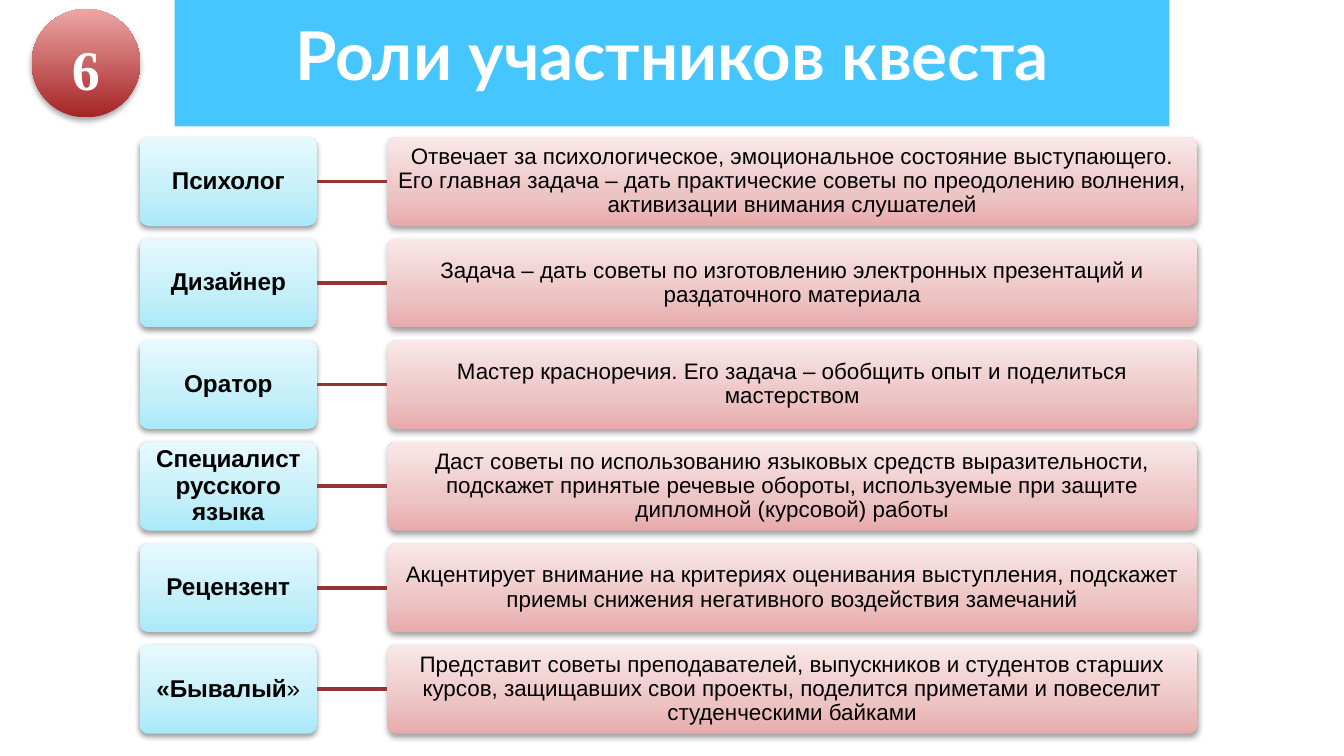
from dataclasses import dataclass

from lxml import etree
from pptx import Presentation
from pptx.dml.color import RGBColor
from pptx.enum.shapes import MSO_CONNECTOR, MSO_SHAPE
from pptx.enum.text import MSO_ANCHOR, PP_ALIGN
from pptx.oxml import parse_xml
from pptx.oxml.ns import qn
from pptx.util import Cm, Pt

RECTANGLE, ROUNDED, OVAL = MSO_SHAPE.RECTANGLE, MSO_SHAPE.ROUNDED_RECTANGLE, MSO_SHAPE.OVAL
STRAIGHT = MSO_CONNECTOR.STRAIGHT
CENTER, TOP, MIDDLE = PP_ALIGN.CENTER, MSO_ANCHOR.TOP, MSO_ANCHOR.MIDDLE
LEFT_SIDE, RIGHT_SIDE = 1, 3
DRAWING_NS = "http://schemas.openxmlformats.org/drawingml/2006/main"


@dataclass(frozen=True)
class Theme:
    banner: str = "00B2FF"
    banner_opacity: int = 73
    light: str = "FFFFFF"
    dark: str = "000000"
    link: str = "963334"
    role_stops: tuple = ((0, "A9E9F9"), (35, "C3EFF9"), (100, "E7F9FE"))
    task_stops: tuple = ((0, "E8AAAA"), (35, "EDC4C4"), (100, "F9E8E8"))
    badge_stops: tuple = ((0, "A52425"), (100, "EDA5A5"))
    title_font: str = "Lato"
    body_font: str = "Arial"
    badge_font: str = "Times New Roman"
    title_size: int = 36
    badge_size: int = 30
    role_size: int = 13
    task_size: int = 12


THEME = Theme()

ROLES = [
    ("Психолог", "Отвечает за психологическое, эмоциональное состояние выступающего. "
     "Его главная задача – дать практические советы по преодолению волнения, "
     "активизации внимания слушателей"),
    ("Дизайнер", "Задача – дать советы по изготовлению электронных презентаций и "
     "раздаточного материала"),
    ("Оратор", "Мастер красноречия. Его задача – обобщить опыт и поделиться мастерством"),
    ("Специалист русского языка", "Даст советы по использованию языковых средств "
     "выразительности, подскажет принятые речевые обороты, используемые при защите "
     "дипломной (курсовой) работы"),
    ("Рецензент", "Акцентирует внимание на критериях оценивания выступления, подскажет "
     "приемы снижения негативного воздействия замечаний"),
    ("«Бывалый»", "Представит советы преподавателей, выпускников и студентов старших "
     "курсов, защищавших свои проекты, поделится приметами и повеселит "
     "студенческими байками"),
]


def add_panel(page, kind, box):
    panel = page.shapes.add_shape(kind, *(Cm(length) for length in box))
    panel.shadow.inherit = False
    panel.line.fill.background()
    return panel


def shade(panel, stops, opacity):
    """Give a panel a bottom-to-top gradient and a soft shadow below."""
    marks = "".join(f'<a:gs pos="{place * 1000}"><a:srgbClr val="{color}"/></a:gs>'
                    for place, color in stops)
    gradient = parse_xml(f'<a:gradFill xmlns:a="{DRAWING_NS}" rotWithShape="1">'
                         f'<a:gsLst>{marks}</a:gsLst>'
                         '<a:lin ang="16200000" scaled="0"/></a:gradFill>')
    shadow = parse_xml(f'<a:outerShdw xmlns:a="{DRAWING_NS}" blurRad="{Pt(3.1)}" '
                       f'dist="{Pt(1.6)}" dir="5400000" rotWithShape="0">'
                       f'<a:srgbClr val="{THEME.dark}"><a:alpha val="{opacity * 1000}"/>'
                       '</a:srgbClr></a:outerShdw>')
    properties = panel._element.spPr
    properties.find(qn("a:ln")).addprevious(gradient)
    properties.find(qn("a:effectLst")).append(shadow)


def write(panel, text, font, size, color, bold=False, anchor=MIDDLE, inset=0.03):
    """Write one centred paragraph in a panel and return it."""
    frame = panel.text_frame
    frame.word_wrap = True
    frame.vertical_anchor = anchor
    frame.margin_left = frame.margin_right = Cm(inset)
    frame.margin_top = frame.margin_bottom = Cm(inset)
    para = frame.paragraphs[0]
    para.alignment = CENTER
    para.add_run().text = text
    para.font.name = font
    para.font.size = Pt(size)
    para.font.bold = bold
    para.font.color.rgb = RGBColor.from_string(color)
    return para


def add_title(page, box, text):
    banner = add_panel(page, RECTANGLE, box)
    banner.fill.solid()
    banner.fill.fore_color.rgb = RGBColor.from_string(THEME.banner)
    color = banner._element.spPr.find(qn("a:solidFill"))[0]
    etree.SubElement(color, qn("a:alpha"), val=str(THEME.banner_opacity * 1000))
    write(banner, text, THEME.title_font, THEME.title_size, THEME.light,
          bold=True, anchor=TOP, inset=0.25)


def add_badge(page, box, number):
    badge = add_panel(page, OVAL, box)
    shade(badge, THEME.badge_stops, 35)
    para = write(badge, number, THEME.badge_font, THEME.badge_size, THEME.light,
                 bold=True, inset=0.1)
    para.line_spacing = 1.15
    para.space_after = Pt(7.5)


def add_card(page, box, text, stops, size, bold=False):
    card = add_panel(page, ROUNDED, box)
    card.adjustments[0] = 0.1
    shade(card, stops, 38)
    para = write(card, text, THEME.body_font, size, THEME.dark, bold)
    para.line_spacing = 0.9
    return card


def add_link(page, role, task):
    link = page.shapes.add_connector(STRAIGHT, 0, 0, 0, 0)
    link.begin_connect(role, RIGHT_SIDE)
    link.end_connect(task, LEFT_SIDE)
    link.line.color.rgb = RGBColor.from_string(THEME.link)
    link.line.width = Pt(2)
    etree.SubElement(link._element.spPr, qn("a:effectLst"))


def add_roles(page, box, roles, role_width=3.35, link_width=1.33, gap=0.24):
    """Stack one row per role: a name card joined to a task card."""
    left, top, width, height = box
    row_height = (height - gap * (len(roles) - 1)) / len(roles)
    task_offset = role_width + link_width
    for index, (name, duty) in enumerate(roles):
        row_top = top + index * (row_height + gap)
        role = add_card(page, (left, row_top, role_width, row_height), name,
                        THEME.role_stops, THEME.role_size, bold=True)
        task = add_card(page, (left + task_offset, row_top, width - task_offset, row_height),
                        duty, THEME.task_stops, THEME.task_size)
        add_link(page, role, task)
        if name.endswith("»"):
            split_closing_quote(role.text_frame.paragraphs[0])


def split_closing_quote(para):
    """Set the closing quotation mark in regular weight."""
    name = para.runs[0]
    name.text = name.text[:-1]
    quote = para.add_run()
    quote.text = "»"
    quote.font.bold = False


def main():
    deck = Presentation()
    deck.slide_width, deck.slide_height = Cm(25.4), Cm(14.29)
    page = deck.slides.add_slide(deck.slide_layouts[6])
    add_title(page, (3.3, 0, 18.8, 2.39), "Роли участников квеста")
    add_roles(page, (2.64, 2.59, 19.99, 11.28), ROLES)
    add_badge(page, (0.6, 0.17, 2.05, 2.05), "6")
    deck.save("out.pptx")


if __name__ == "__main__":
    main()
